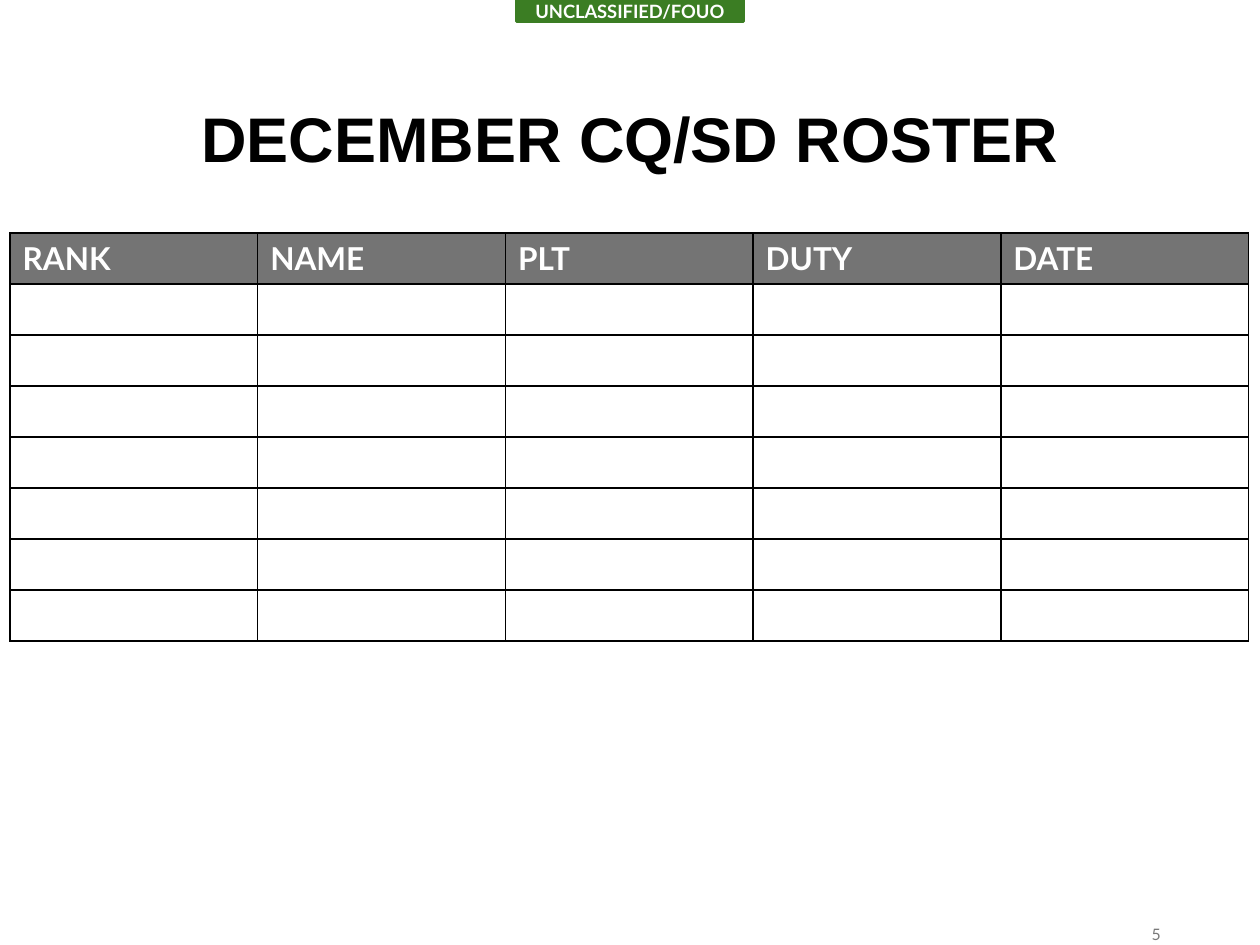
from lxml.etree import SubElement
from pptx import Presentation
from pptx.dml.color import RGBColor
from pptx.enum.shapes import MSO_SHAPE
from pptx.enum.text import MSO_ANCHOR, PP_ALIGN
from pptx.oxml.ns import qn
from pptx.util import Inches, Pt

# Content
BANNER = "UNCLASSIFIED/FOUO"
TITLE = "DECEMBER CQ/SD ROSTER"
PAGE = "5"
HEADS = ["RANK", "NAME", "PLT", "DUTY", "DATE"]
BLANKS = 7

GREEN = RGBColor(0x3B, 0x7D, 0x23)
GRAY = RGBColor(0x74, 0x74, 0x74)
PALE = RGBColor(0x79, 0x79, 0x79)
BLACK = RGBColor(0, 0, 0)
WHITE = RGBColor(0xFF, 0xFF, 0xFF)


def style(para, size, color, bold=False, name="Lato"):
    font = para.font
    font.size, font.bold, font.name = Pt(size), bold, name
    font.color.rgb = color


def write(shape, text, align, *look):
    frame = shape.text_frame
    frame.word_wrap = True
    frame.vertical_anchor = MSO_ANCHOR.MIDDLE
    para = frame.paragraphs[0]
    para.text, para.alignment = text, align
    style(para, *look)
    return para


def border(cell):
    props = cell._tc.get_or_add_tcPr()
    for side in ("a:lnL", "a:lnR", "a:lnT", "a:lnB"):
        line = SubElement(props, qn(side), w=str(Pt(1)))
        fill = SubElement(line, qn("a:solidFill"))
        SubElement(fill, qn("a:srgbClr"), val=str(BLACK))


deck = Presentation()
deck.slide_width, deck.slide_height = Inches(10), Inches(7.5)
slide = deck.slides.add_slide(deck.slide_layouts[6])
shapes = slide.shapes

# Marking banner
banner = shapes.add_shape(MSO_SHAPE.RECTANGLE, Inches(4.1), 0,
                          Inches(1.8), Inches(0.17))
banner.shadow.inherit = False
banner.fill.solid()
banner.fill.fore_color.rgb = GREEN
banner.line.color.rgb = GREEN
banner.line.width = Pt(1.5)
write(banner, BANNER, PP_ALIGN.CENTER, 10.5, WHITE, True)

# Title
title = shapes.add_textbox(Inches(0.69), Inches(0.4), Inches(8.62), Inches(1.45))
para = write(title, TITLE, PP_ALIGN.CENTER, 36, BLACK, True, "Arial")
para.line_spacing = 0.9

# Page number
page = shapes.add_textbox(Inches(7.06), Inches(7.34), Inches(2.25), Inches(0.15))
write(page, PAGE, PP_ALIGN.RIGHT, 9, PALE)

# Roster table
rows = [HEADS] + [[""] * len(HEADS)] * BLANKS
table = shapes.add_table(len(rows), len(HEADS), Inches(0.08), Inches(1.85),
                         Inches(9.83), Inches(3.24)).table
for r, row in enumerate(rows):
    for c, text in enumerate(row):
        cell = table.cell(r, c)
        border(cell)
        cell.fill.solid()
        cell.fill.fore_color.rgb = WHITE if r else GRAY
        cell.text = text
        style(cell.text_frame.paragraphs[0], 18, BLACK if r else WHITE, not r)

deck.save("out.pptx")
